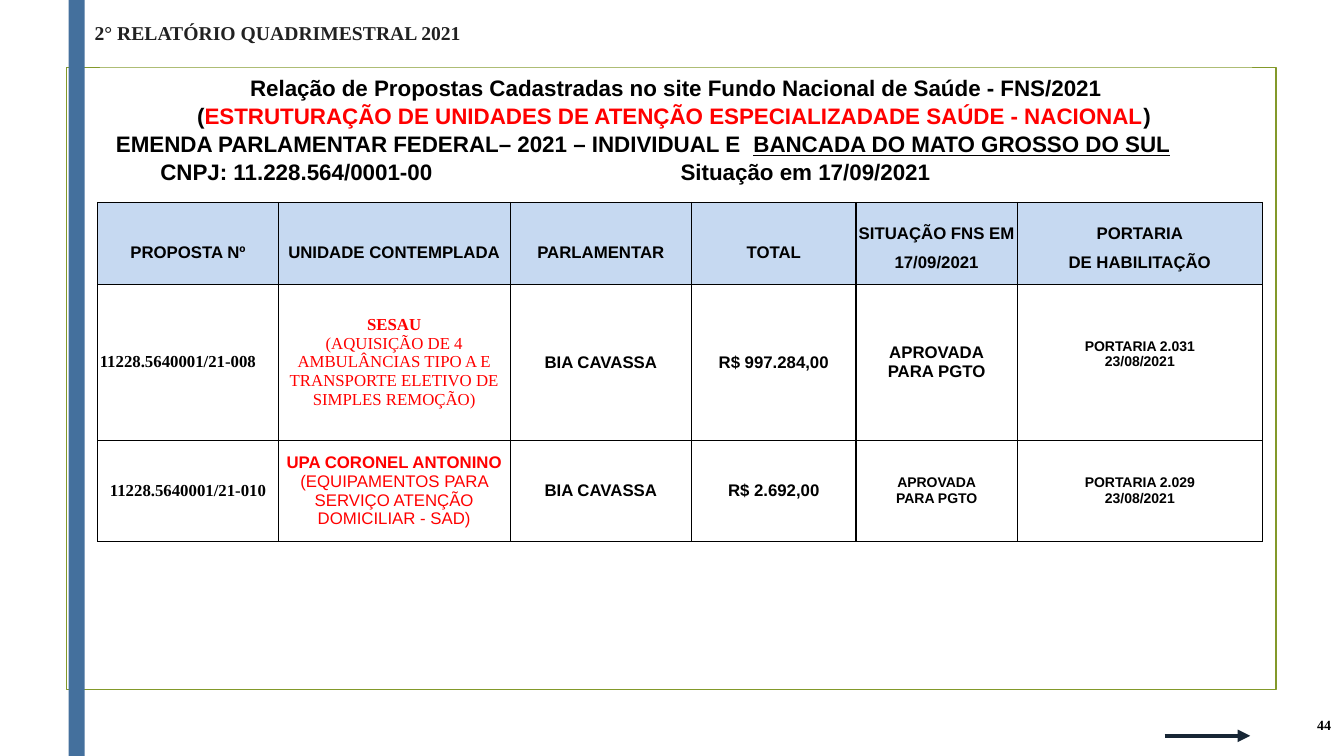
from dataclasses import dataclass
from typing import Any, Optional

import pptx
import pptx.dml.color
import pptx.enum.dml
import pptx.enum.shapes
import pptx.enum.text
import pptx.oxml
import pptx.oxml.ns
import pptx.util

Inches = pptx.util.Inches
Pt = pptx.util.Pt
RGBColor = pptx.dml.color.RGBColor
ALIGN = pptx.enum.text.PP_ALIGN
ANCHOR = pptx.enum.text.MSO_ANCHOR
RECTANGLE = pptx.enum.shapes.MSO_SHAPE.RECTANGLE

BLACK = RGBColor(0x00, 0x00, 0x00)
WHITE = RGBColor(0xFF, 0xFF, 0xFF)
RED = RGBColor(0xFF, 0x00, 0x00)
GREEN = RGBColor(0x83, 0x99, 0x2A)
BLUE = RGBColor(0x44, 0x70, 0x9D)
PALE_BLUE = RGBColor(0xC6, 0xD9, 0xF1)
CHARCOAL = RGBColor(0x21, 0x21, 0x21)
NAVY = RGBColor(0x17, 0x26, 0x35)
SANS = "Arial"
SERIF = "Times New Roman"

COLUMN_WIDTHS = (1.79, 2.3, 1.8, 1.63, 1.6, 2.43)
ROW_HEIGHTS = (0.81, 1.55, 1)


@dataclass(frozen=True)
class Style:
    size: float = 12
    name: str = SANS
    color: RGBColor = BLACK
    bold: bool = True


@dataclass(frozen=True)
class Span:
    text: str
    color: Optional[RGBColor] = None
    underline: Optional[bool] = None


@dataclass(frozen=True)
class HeadingLine:
    spans: tuple[Span, ...]
    align: ALIGN = ALIGN.LEFT
    indent: float = 0
    tabs: tuple[float, ...] = ()


@dataclass(frozen=True)
class Cell:
    lines: tuple[str, ...]
    styles: tuple[Style, ...] = (Style(),)
    align: ALIGN = ALIGN.CENTER
    spacing: float = 1
    fill: Optional[RGBColor] = None
    bottom: float = 0


SMALL = Style(size=10)
NUMBER = Style(name=SERIF)


def header(*lines: str, spacing: float = 2) -> Cell:
    return Cell(lines, spacing=spacing, fill=PALE_BLUE)


def unit(name: str, detail: str, font: str) -> Cell:
    return Cell((name, detail), (Style(name=font, color=RED), Style(name=font, color=RED, bold=False)))


HEADING = (
    HeadingLine((Span("Relação de Propostas Cadastradas no site Fundo Nacional de Saúde - FNS/2021"),), ALIGN.CENTER),
    HeadingLine(
        (
            Span("("),
            Span("ESTRUTURAÇÃO DE UNIDADES DE ATENÇÃO ESPECIALIZADADE SAÚDE - NACIONAL", RED),
            Span(")\t"),
        ),
        ALIGN.CENTER,
    ),
    HeadingLine(
        (
            Span("EMENDA PARLAMENTAR FEDERAL– 2021 – INDIVIDUAL E  "),
            Span("BANCADA DO MATO GROSSO DO SUL", underline=True),
        ),
        indent=0.06,
    ),
    HeadingLine((Span("\tCNPJ: 11.228.564/0001-00\tSituação em 17/09/2021"),), tabs=(0.5, 5.66)),
)

ROWS = (
    (
        header("PROPOSTA Nº"),
        header("UNIDADE CONTEMPLADA"),
        header("PARLAMENTAR"),
        header("TOTAL"),
        header("SITUAÇÃO FNS EM 17/09/2021", spacing=1.5),
        header("PORTARIA", "DE HABILITAÇÃO", spacing=1.5),
    ),
    (
        Cell(("11228.5640001/21-008",), (NUMBER,), ALIGN.LEFT),
        unit("SESAU", "(AQUISIÇÃO DE 4 AMBULÂNCIAS TIPO A E TRANSPORTE ELETIVO DE SIMPLES REMOÇÃO)", SERIF),
        Cell(("BIA CAVASSA",)),
        Cell(("R$ 997.284,00",)),
        Cell(("APROVADA", "PARA PGTO")),
        Cell(("PORTARIA 2.031", "23/08/2021"), (SMALL,), bottom=0.16),
    ),
    (
        Cell(("11228.5640001/21-010",), (NUMBER,)),
        unit("UPA CORONEL ANTONINO", "(EQUIPAMENTOS PARA SERVIÇO ATENÇÃO DOMICILIAR - SAD)", SANS),
        Cell(("BIA CAVASSA",)),
        Cell(("R$ 2.692,00",)),
        Cell(("APROVADA", "PARA PGTO"), (SMALL,)),
        Cell(("PORTARIA 2.029", "23/08/2021"), (SMALL,)),
    ),
)


def add_xml(parent: Any, tag: str, **attributes: str) -> Any:
    element = pptx.oxml.parse_xml(f'<a:{tag} {pptx.oxml.ns.nsdecls("a")}/>')
    for key, value in attributes.items():
        element.set(key, value)
    parent.append(element)
    return element


def apply_style(paragraph: Any, style: Style) -> None:
    font = paragraph.font
    font.size, font.name, font.bold = Pt(style.size), style.name, style.bold
    font.color.rgb = style.color


def add_rectangle(slide: Any, left: float, top: float, width: float, height: float) -> Any:
    shape = slide.shapes.add_shape(RECTANGLE, Inches(left), Inches(top), Inches(width), Inches(height))
    shape.shadow.inherit = False
    return shape


def add_label(slide: Any, text: str, left: float, top: float, width: float, height: float,
              style: Style, align: ALIGN, anchor: ANCHOR) -> None:
    shape = slide.shapes.add_textbox(Inches(left), Inches(top), Inches(width), Inches(height))
    shape.text_frame.word_wrap = True
    shape.text_frame.vertical_anchor = anchor
    paragraph = shape.text_frame.paragraphs[0]
    paragraph.text, paragraph.alignment = text, align
    apply_style(paragraph, style)


def fill_heading(title: Any) -> None:
    title.left, title.top, title.width, title.height = Inches(0.99), Inches(0.67), Inches(11.43), Inches(1.21)
    title.fill.solid()
    title.fill.fore_color.rgb = WHITE
    frame = title.text_frame
    frame.word_wrap, frame.vertical_anchor = True, ANCHOR.TOP
    frame.auto_size = pptx.enum.text.MSO_AUTO_SIZE.NONE
    for index, line in enumerate(HEADING):
        paragraph = frame.add_paragraph() if index else frame.paragraphs[0]
        paragraph.alignment, paragraph.line_spacing = line.align, 1.05
        properties = paragraph._p.get_or_add_pPr()
        properties.set("marL", str(Inches(line.indent)))
        if line.tabs:
            tab_list = add_xml(properties, "tabLst")
            for position in line.tabs:
                add_xml(tab_list, "tab", pos=str(Inches(position)), algn="l")
        apply_style(paragraph, Style(size=16))
        for span in line.spans:
            run = paragraph.add_run()
            run.text = span.text
            if span.color is not None:
                run.font.color.rgb = span.color
            if span.underline:
                run.font.underline = True


def fill_cell(table_cell: Any, cell: Cell) -> None:
    table_cell.margin_left = table_cell.margin_right = Inches(0.02)
    table_cell.margin_top, table_cell.margin_bottom = 0, Inches(cell.bottom)
    table_cell.vertical_anchor = ANCHOR.MIDDLE
    properties = table_cell._tc.get_or_add_tcPr()
    for side in ("lnL", "lnR", "lnT", "lnB"):
        border = add_xml(properties, side, w=str(Pt(1)))
        add_xml(add_xml(border, "solidFill"), "srgbClr", val=str(BLACK))
    if cell.fill is None:
        table_cell.fill.background()
    else:
        table_cell.fill.solid()
        table_cell.fill.fore_color.rgb = cell.fill
    frame = table_cell.text_frame
    for index, line in enumerate(cell.lines):
        paragraph = frame.add_paragraph() if index else frame.paragraphs[0]
        paragraph.text, paragraph.alignment = line, cell.align
        paragraph.line_spacing = cell.spacing
        apply_style(paragraph, cell.styles[min(index, len(cell.styles) - 1)])


def add_proposals(slide: Any) -> None:
    table = slide.shapes.add_table(len(ROWS), len(COLUMN_WIDTHS), Inches(0.97), Inches(2.01),
                                   Inches(sum(COLUMN_WIDTHS)), Inches(sum(ROW_HEIGHTS))).table
    table.horz_banding = False
    for column, width in zip(table.columns, COLUMN_WIDTHS):
        column.width = Inches(width)
    for row, height, cells in zip(table.rows, ROW_HEIGHTS, ROWS):
        row.height = Inches(height)
        for table_cell, cell in zip(row.cells, cells):
            fill_cell(table_cell, cell)


def add_arrow(slide: Any) -> None:
    arrow = slide.shapes.add_connector(pptx.enum.shapes.MSO_CONNECTOR.STRAIGHT,
                                       Inches(11.55), Inches(7.3), Inches(12.4), Inches(7.3))
    arrow.line.color.rgb, arrow.line.width = NAVY, Pt(3)
    add_xml(arrow.line._get_or_add_ln(), "tailEnd", type="triangle")
    add_xml(arrow.element.spPr, "effectLst")


def main() -> None:
    presentation = pptx.Presentation()
    presentation.slide_width, presentation.slide_height = Inches(13.33), Inches(7.5)
    slide = presentation.slides.add_slide(presentation.slide_layouts[5])
    title = slide.shapes.title
    frame = add_rectangle(slide, 0.66, 0.67, 12, 6.17)
    frame.fill.background()
    frame.line.color.rgb, frame.line.width = GREEN, Pt(1.25)
    bar = add_rectangle(slide, 0.68, 0, 0.16, 7.5)
    bar.fill.solid()
    bar.fill.fore_color.rgb = BLUE
    bar.line.fill.background()
    for shape in (frame, bar):
        title.element.addprevious(shape.element)
    fill_heading(title)
    add_label(slide, "2° RELATÓRIO QUADRIMESTRAL 2021", 0.84, 0.16, 4.93, 0.34,
              Style(14, SERIF, CHARCOAL), ALIGN.LEFT, ANCHOR.TOP)
    add_label(slide, "44", 11.55, 6.97, 1.75, 0.44, Style(10, SERIF), ALIGN.RIGHT, ANCHOR.MIDDLE)
    add_proposals(slide)
    add_arrow(slide)
    presentation.save("out.pptx")


if __name__ == "__main__":
    main()
